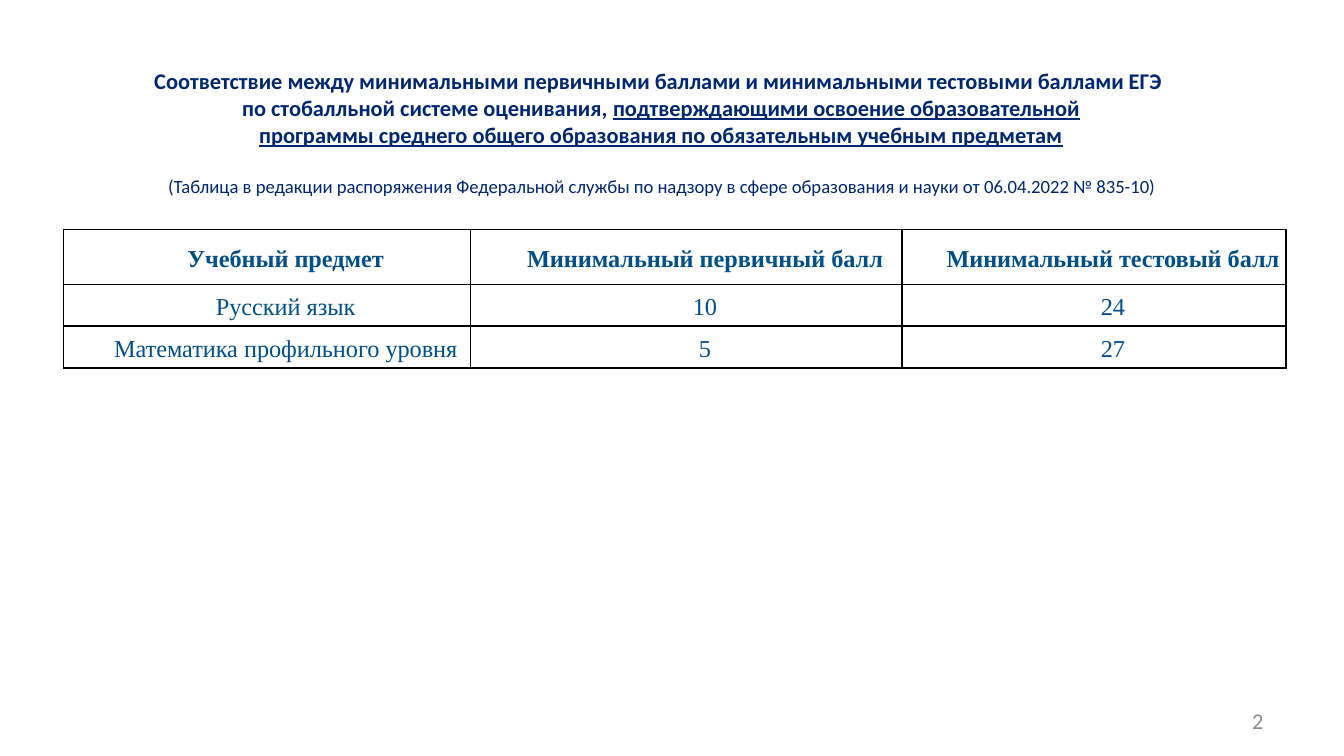
from dataclasses import dataclass

import pptx
import pptx.dml.color
import pptx.enum.text
import pptx.oxml
import pptx.oxml.ns
import pptx.util

Pt = pptx.util.Pt
Color = pptx.dml.color.RGBColor
Align = pptx.enum.text.PP_ALIGN
Anchor = pptx.enum.text.MSO_ANCHOR

NAVY = Color(0x00, 0x27, 0x74)
BLUE = Color(0x00, 0x4F, 0x8A)
GRAY = Color(0x8C, 0x8C, 0x8C)
WHITE = Color(0xFF, 0xFF, 0xFF)
BLACK = Color(0x00, 0x00, 0x00)

WIDTHS = (218, 231.3, 205.8)
HEIGHTS = (29.5, 22.3, 22.3)
ROWS = (
    ("Учебный предмет", "Минимальный первичный балл", "Минимальный тестовый балл"),
    ("Русский язык", "10", "24"),
    ("Математика профильного уровня", "5", "27"),
)


@dataclass
class Style:
    size: float
    color: Color
    bold: bool = False
    face: str = "Calibri"
    align: Align = Align.CENTER
    before: float = 0


@dataclass
class Para:
    """Plain text, then underlined lines, in one style."""
    style: Style
    plain: str
    under: tuple[str, ...] = ()


TITLE = Style(12, NAVY, bold=True)
NOTE = Style(10, NAVY, before=14.6)
PAGE = Style(12, GRAY, align=Align.RIGHT)
HEAD = Style(13, BLUE, bold=True, face="Times New Roman", before=5)
BODY = Style(13, BLUE, face="Times New Roman")

HEADING = (
    Para(TITLE, "Соответствие между минимальными первичными баллами "
                "и минимальными тестовыми баллами ЕГЭ "),
    Para(TITLE, "по стобалльной системе оценивания, ",
         ("подтверждающими освоение образовательной",
          "программы среднего общего образования по обязательным учебным предметам")),
    Para(NOTE, "(Таблица в редакции распоряжения Федеральной службы по надзору "
               "в сфере образования и науки от 06.04.2022 № 835-10)"),
)


def write(line, para: Para) -> None:
    style = para.style
    line.alignment = style.align
    line.space_before = Pt(style.before)
    font = line.font
    font.name, font.size, font.bold = style.face, Pt(style.size), style.bold
    font.color.rgb = style.color
    line.add_run().text = para.plain
    for index, text in enumerate(para.under):
        if index:
            line.add_line_break()
        run = line.add_run()
        run.text = text
        run.font.underline = True


def add_text(slide, left: float, top: float, width: float, height: float,
             paras: tuple[Para, ...], anchor: Anchor = Anchor.TOP) -> None:
    box = slide.shapes.add_textbox(Pt(left), Pt(top), Pt(width), Pt(height))
    frame = box.text_frame
    frame.word_wrap = True
    frame.vertical_anchor = anchor
    for index, para in enumerate(paras):
        write(frame.add_paragraph() if index else frame.paragraphs[0], para)


def frame_cell(cell) -> None:
    """Draw the four borders; they must come before the fill in tcPr."""
    props = cell._tc.get_or_add_tcPr()
    space = pptx.oxml.ns.nsdecls("a")
    for index, side in enumerate(("lnL", "lnR", "lnT", "lnB")):
        props.insert(index, pptx.oxml.parse_xml(
            f'<a:{side} {space} w="{Pt(1)}"><a:solidFill>'
            f'<a:srgbClr val="{BLACK}"/></a:solidFill></a:{side}>'))


def fill_cell(cell, text: str, style: Style) -> None:
    cell.fill.solid()
    cell.fill.fore_color.rgb = WHITE
    cell.vertical_anchor = Anchor.MIDDLE
    cell.margin_left = cell.margin_right = Pt(0.7)
    cell.margin_top = cell.margin_bottom = 0
    line = cell.text_frame.paragraphs[0]
    write(line, Para(style, text))
    line.line_spacing = 1.15
    props = line._p.get_or_add_pPr()
    props.set("marL", "0")
    props.set("indent", str(Pt(20)))
    frame_cell(cell)


def add_scores(slide, left: float, top: float) -> None:
    table = slide.shapes.add_table(
        len(ROWS), len(WIDTHS), Pt(left), Pt(top),
        Pt(sum(WIDTHS)), Pt(sum(HEIGHTS))).table
    table.first_row = table.horz_banding = False
    for column, width in zip(table.columns, WIDTHS):
        column.width = Pt(width)
    for index, (row, height, texts) in enumerate(zip(table.rows, HEIGHTS, ROWS)):
        row.height = Pt(height)
        for cell, text in zip(row.cells, texts):
            fill_cell(cell, text, BODY if index else HEAD)


def main() -> None:
    deck = pptx.Presentation()
    deck.slide_width, deck.slide_height = Pt(720), Pt(405)
    slide = deck.slides.add_slide(deck.slide_layouts[6])
    add_text(slide, 516, 375, 168, 21.6, (Para(PAGE, "2"),), Anchor.MIDDLE)
    add_scores(slide, 34, 123)
    add_text(slide, 42.5, 32.4, 623.5, 77.8, HEADING)
    deck.save("out.pptx")


if __name__ == "__main__":
    main()
